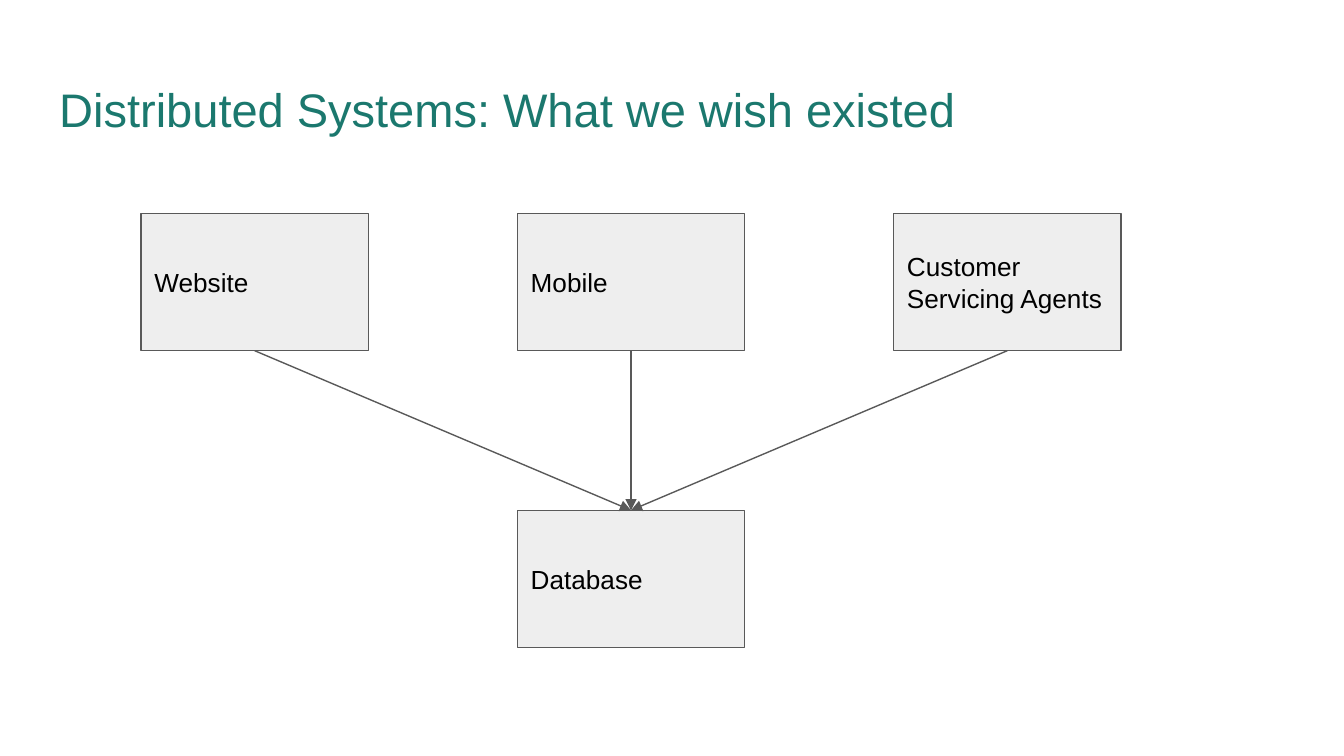
from lxml.etree import SubElement
from pptx import Presentation
from pptx.dml.color import RGBColor
from pptx.enum.shapes import MSO_CONNECTOR, MSO_SHAPE
from pptx.enum.text import MSO_ANCHOR, PP_ALIGN
from pptx.oxml.ns import qn
from pptx.util import Pt

COLORS = {"title": "1B786E", "box": "EEEEEE", "line": "595959", "text": "000000"}
FONT = "Arial"
INSET = 7.2
BOX_WIDTH, BOX_HEIGHT = 121.7, 73.4
CLIENT_LEFT, CLIENT_PITCH, CLIENT_TOP = 75.6, 201.6, 114.5
DATABASE_TOP = 273.4
CLIENTS = ["Website", "Mobile", "Customer Servicing Agents"]


def color(name):
    return RGBColor.from_string(COLORS[name])


def write_text(frame, text, size, color_name, anchor):
    frame.word_wrap = True
    frame.vertical_anchor = anchor
    frame.margin_left = frame.margin_right = Pt(INSET)
    frame.margin_top = frame.margin_bottom = Pt(INSET)
    paragraph = frame.paragraphs[0]
    paragraph.alignment = PP_ALIGN.LEFT
    run = paragraph.add_run()
    run.text = text
    run.font.name = FONT
    run.font.size = Pt(size)
    run.font.color.rgb = color(color_name)


def set_title(slide, text):
    title = slide.shapes.title
    title.left, title.top = Pt(24.5), Pt(35.3)
    title.width, title.height = Pt(671), Pt(45.4)
    write_text(title.text_frame, text, 25.2, "title", MSO_ANCHOR.BOTTOM)


def style_line(line):
    line.color.rgb = color("line")
    line.width = Pt(0.75)


def add_box(slide, text, left, top):
    box = slide.shapes.add_shape(
        MSO_SHAPE.RECTANGLE, Pt(left), Pt(top), Pt(BOX_WIDTH), Pt(BOX_HEIGHT)
    )
    box.shadow.inherit = False
    box.fill.solid()
    box.fill.fore_color.rgb = color("box")
    style_line(box.line)
    write_text(box.text_frame, text, 14, "text", MSO_ANCHOR.MIDDLE)
    return box


def add_arrow(slide, source, target):
    arrow = slide.shapes.add_connector(MSO_CONNECTOR.STRAIGHT, 0, 0, 0, 0)
    arrow.begin_connect(source, 2)
    arrow.end_connect(target, 0)
    style_line(arrow.line)
    SubElement(arrow.line._get_or_add_ln(), qn("a:tailEnd"), type="triangle")
    SubElement(arrow._element.spPr, qn("a:effectLst"))


def main():
    presentation = Presentation()
    presentation.slide_width, presentation.slide_height = Pt(720), Pt(405)
    slide = presentation.slides.add_slide(presentation.slide_layouts[5])
    set_title(slide, "Distributed Systems: What we wish existed")
    clients = [
        add_box(slide, name, CLIENT_LEFT + index * CLIENT_PITCH, CLIENT_TOP)
        for index, name in enumerate(CLIENTS)
    ]
    database = add_box(slide, "Database", CLIENT_LEFT + CLIENT_PITCH, DATABASE_TOP)
    for client in clients:
        add_arrow(slide, client, database)
    presentation.save("out.pptx")


if __name__ == "__main__":
    main()
